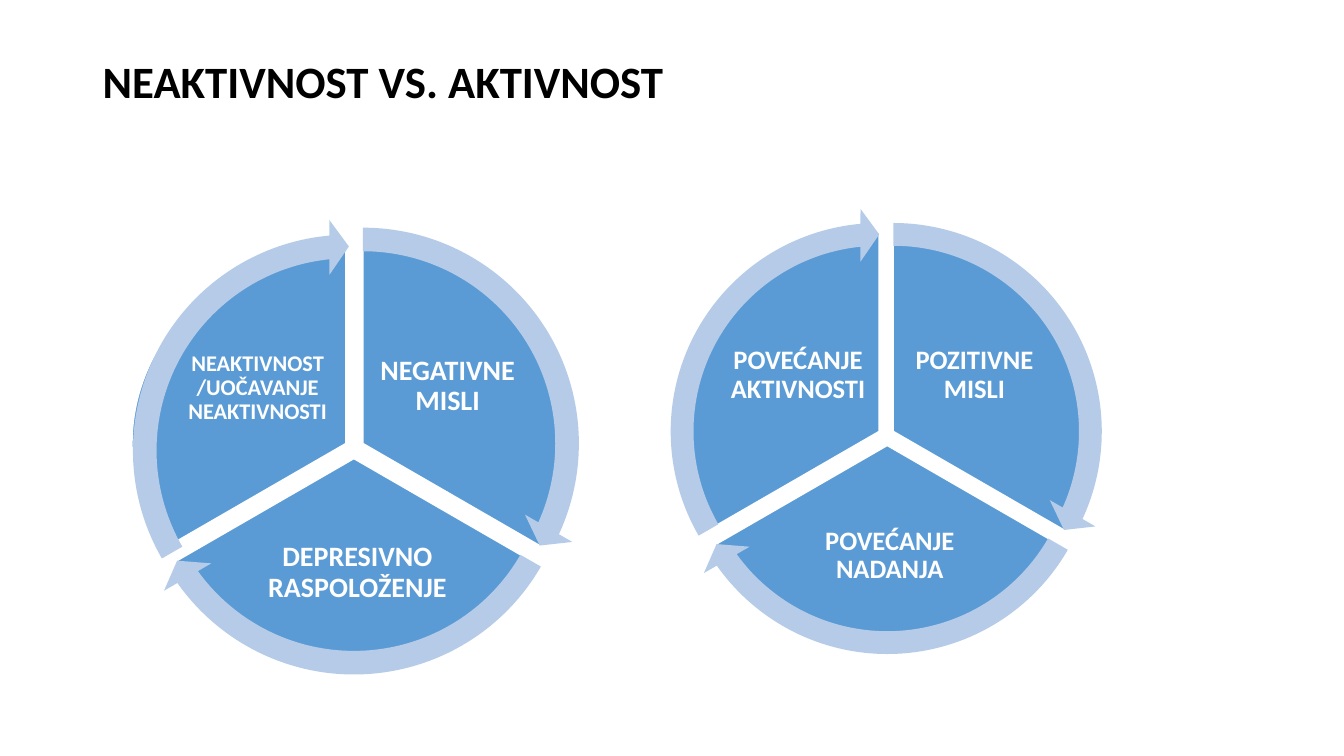
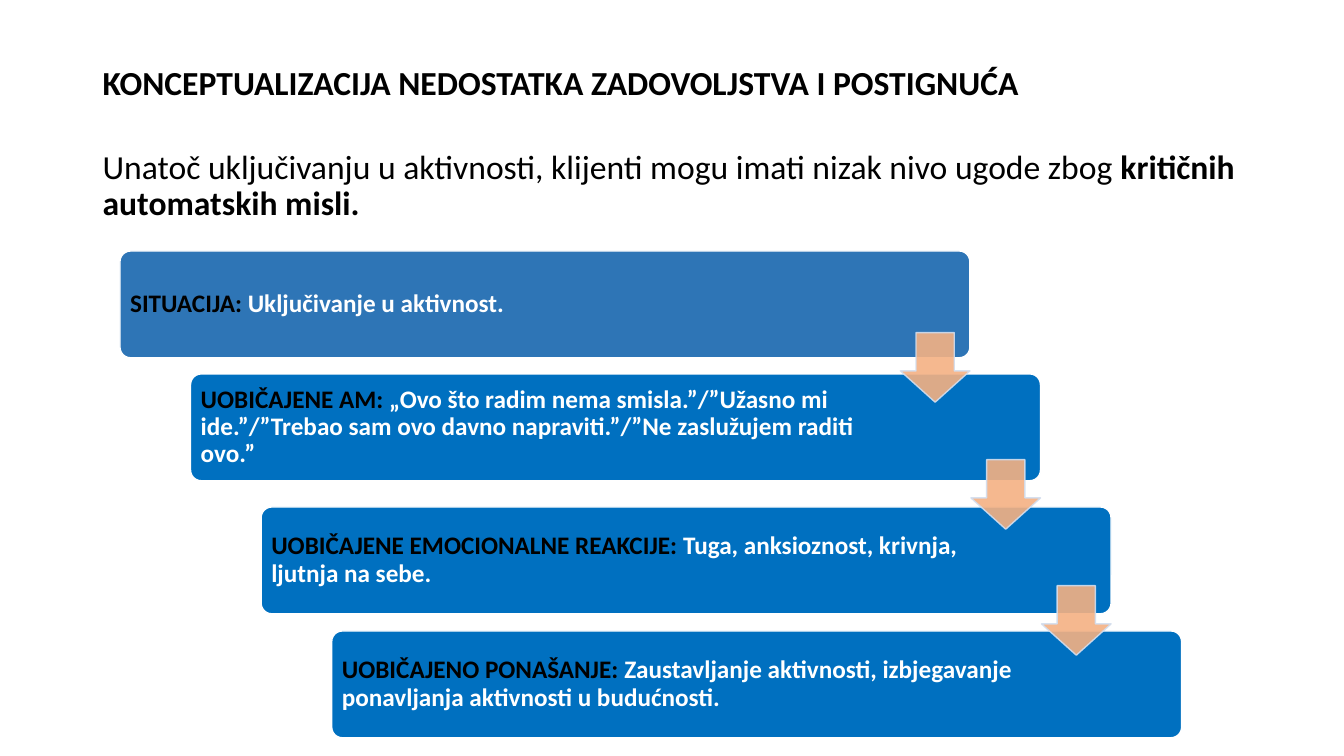
from lxml import etree
from pptx import Presentation
from pptx.dml.color import RGBColor
from pptx.enum import shapes, text
from pptx.oxml import ns
from pptx.util import Inches, Pt

FONT = "Calibri"
BLACK = RGBColor(0x00, 0x00, 0x00)
WHITE = RGBColor(0xFF, 0xFF, 0xFF)
SECTOR_BLUE = RGBColor(0x5B, 0x9B, 0xD5)
ARROW_BLUE = RGBColor(0xB5, 0xCB, 0xE7)
FIRST_STEP_BLUE = RGBColor(0x2E, 0x75, 0xB6)
STEP_BLUE = RGBColor(0x00, 0x70, 0xC0)
ARROW_ORANGE = RGBColor(0xF4, 0xB1, 0x83)
ARROW_EDGE = RGBColor(0xD2, 0xDE, 0xEF)

# Start and end angles of each sector and its arrow, as preset adjustments
SECTOR_ANGLES = [(162, 18), (18, 90), (90, 162)]
ARROW_ANGLES = [(14.725, 161.994), (86.72, 18.005), (158.73, 90)]
ARROW_SCALE = 1.125

# Boxes are left, top, width, height, measured from the wheel's corner.
WHEELS = [
    dict(
        left=1.31, top=2.36,
        sectors=[
            dict(label="NEGATIVNE MISLI", size=20,
                 box=(0.25, 0, 4.08, 4.08), label_box=(2.4, 0.87, 1.46, 1.21)),
            dict(label="DEPRESIVNO RASPOLOŽENJE", size=20,
                 box=(0.16, 0.15, 4.08, 4.08), label_box=(1.14, 2.79, 2.19, 1.07)),
            dict(label="NEAKTIVNOST /UOČAVANJE NEAKTIVNOSTI", size=16,
                 box=(0, 0.08, 4.24, 3.92), label_box=(0.49, 0.91, 1.51, 1.17),
                 arrow_shift=(0.03, 0.07)),
        ],
        diameter=4.08,
    ),
    dict(
        left=6.75, top=2.31,
        sectors=[
            dict(label="POZITIVNE MISLI", size=19,
                 box=(0.14, 0, 3.94, 3.94), label_box=(2.21, 0.83, 1.41, 1.17)),
            dict(label="POVEĆANJE NADANJA", size=19,
                 box=(0.08, 0.14, 3.94, 3.94), label_box=(1.02, 2.69, 2.11, 1.03)),
            dict(label="POVEĆANJE AKTIVNOSTI", size=19,
                 box=(0, 0, 3.94, 3.94), label_box=(0.46, 0.83, 1.41, 1.17)),
        ],
        diameter=3.94,
    ),
]

# Top, fill, heading, wording
STEPS = [
    (2.49, FIRST_STEP_BLUE, "SITUACIJA: ", "Uključivanje u aktivnost."),
    (3.71, STEP_BLUE, "UOBIČAJENE AM: ",
     "„Ovo što radim nema smisla.”/”Užasno mi ide.”/”Trebao sam ovo davno "
     "napraviti.”/”Ne zaslužujem raditi ovo.”"),
    (5.03, STEP_BLUE, "UOBIČAJENE EMOCIONALNE REAKCIJE: ",
     "Tuga, anksioznost, krivnja, ljutnja na sebe."),
    (6.26, STEP_BLUE, "UOBIČAJENO PONAŠANJE: ",
     "Zaustavljanje aktivnosti, izbjegavanje ponavljanja aktivnosti u budućnosti."),
]
STEP_ARROW_TOPS = [3.3, 4.56, 5.81]


def write_text(shape, runs, size, align=text.PP_ALIGN.LEFT,
               anchor=text.MSO_ANCHOR.MIDDLE, margins=(0.1, 0.05, 0.1, 0.05),
               space_before=0):
    """Write (wording, colour, bold) runs as the shape's one paragraph."""
    frame = shape.text_frame
    frame.word_wrap = True
    frame.vertical_anchor = anchor
    (frame.margin_left, frame.margin_top,
     frame.margin_right, frame.margin_bottom) = map(Inches, margins)
    paragraph = frame.paragraphs[0]
    paragraph.alignment = align
    paragraph.line_spacing = 0.9
    paragraph.space_before = Pt(space_before)
    for wording, color, bold in runs:
        run = paragraph.add_run()
        run.text = wording
        run.font.name = FONT
        run.font.size = Pt(size)
        run.font.bold = bold
        run.font.color.rgb = color


def add_text(slide, box, runs, **text_format):
    write_text(slide.shapes.add_textbox(*map(Inches, box)), runs, **text_format)


def add_shape(slide, kind, box, fill, line=None, adjustments=()):
    shape = slide.shapes.add_shape(kind, *map(Inches, box))
    shape.shadow.inherit = False
    shape.fill.solid()
    shape.fill.fore_color.rgb = fill
    if line is None:
        shape.line.fill.background()
    else:
        shape.line.color.rgb = line
        shape.line.width = Pt(1)
    for index, value in enumerate(adjustments):
        shape.adjustments[index] = value
    return shape


def set_opacity(shape, percent):
    """Apply one opacity to the fill and the outline."""
    for color in shape._element.spPr.iter(ns.qn("a:srgbClr")):
        etree.SubElement(color, ns.qn("a:alpha"), val=str(percent * 1000))


def add_title(slide, wording, size, width=11.5):
    add_text(slide, (0.92, 0.4, width, 0.87), [(wording, BLACK, True)], size=size)


def add_wheel(slide, left, top, sectors, diameter):
    """Three sectors with labels, and an arrow around each sector."""
    def place(box):
        return (left + box[0], top + box[1], *box[2:])

    for sector, angles in zip(sectors, SECTOR_ANGLES):
        add_shape(slide, shapes.MSO_SHAPE.PIE, place(sector["box"]),
                  SECTOR_BLUE, WHITE, angles)
        add_text(slide, place(sector["label_box"]), [(sector["label"], WHITE, True)],
                 size=sector["size"], align=text.PP_ALIGN.CENTER, margins=(0.03,) * 4)

    arrow_size = diameter * ARROW_SCALE
    for sector, angles in zip(sectors, ARROW_ANGLES):
        x, y, width, height = place(sector["box"])
        shift_x, shift_y = sector.get("arrow_shift", (0, 0))
        arrow_box = (x + (width - arrow_size) / 2 + shift_x,
                     y + (height - arrow_size) / 2 + shift_y,
                     arrow_size, arrow_size)
        add_shape(slide, shapes.MSO_SHAPE.CIRCULAR_ARROW, arrow_box, ARROW_BLUE,
                  adjustments=(0.051, 3.275, *angles, 0.059))


def add_staircase(slide, left, width=8.43, height=1.06, indent=0.7, arrow_size=0.69):
    """Steps that move right as they descend, joined by block arrows."""
    for index, (top, fill, heading, wording) in enumerate(STEPS):
        step = add_shape(slide, shapes.MSO_SHAPE.ROUNDED_RECTANGLE,
                         (left + index * indent, top, width, height),
                         fill, WHITE, [0.1])
        write_text(step, [(heading, BLACK, True), (wording, WHITE, True)],
                   size=18, margins=(0.07, 0.07, 1.47, 0.07))
    for index, top in enumerate(STEP_ARROW_TOPS):
        arrow_left = left + index * indent + width - arrow_size
        arrow = add_shape(slide, shapes.MSO_SHAPE.DOWN_ARROW,
                          (arrow_left, top, arrow_size, arrow_size),
                          ARROW_ORANGE, ARROW_EDGE)
        # The preset lists the head length first and the shaft width second.
        arrow.adjustments[0], arrow.adjustments[1] = 0.55, 0.45
        set_opacity(arrow, 90)


def build_wheels_slide(slide):
    add_title(slide, "NEAKTIVNOST VS. AKTIVNOST", 32)
    for wheel in WHEELS:
        add_wheel(slide, **wheel)


def build_steps_slide(slide):
    add_title(slide, "KONCEPTUALIZACIJA NEDOSTATKA ZADOVOLJSTVA I POSTIGNUĆA", 24,
              width=10.89)
    add_text(slide, (0.92, 1.44, 11.5, 0.9),
             [("Unatoč uključivanju u aktivnosti, klijenti mogu imati nizak nivo "
               "ugode zbog ", BLACK, False),
              ("kritičnih automatskih misli.", BLACK, True)],
             size=24, anchor=text.MSO_ANCHOR.TOP, space_before=10)
    add_staircase(slide, left=1.19)


def main():
    presentation = Presentation()
    presentation.slide_width = Inches(13.33)
    presentation.slide_height = Inches(7.5)
    blank = presentation.slide_layouts[6]
    for build in (build_wheels_slide, build_steps_slide):
        build(presentation.slides.add_slide(blank))
    presentation.save("out.pptx")


if __name__ == "__main__":
    main()
